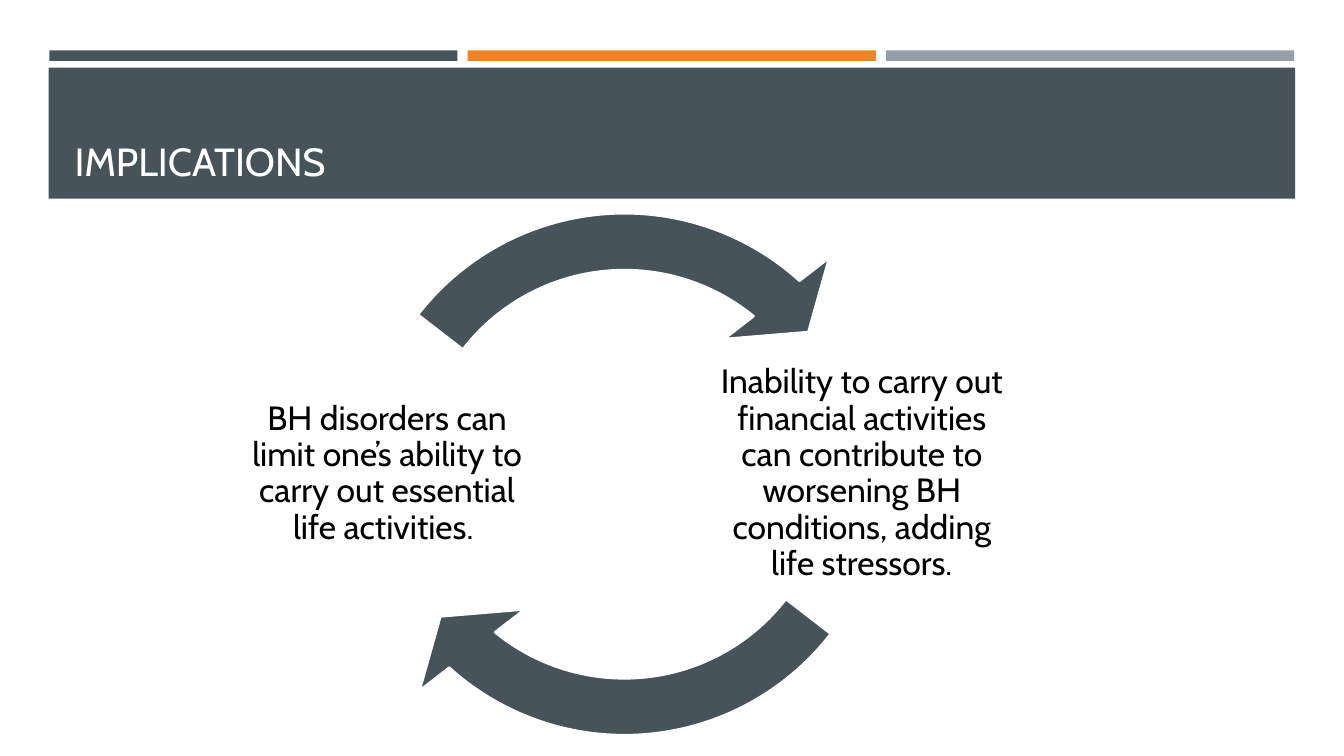
"""Build a slide with a title band and a two-step cycle."""
from dataclasses import dataclass

from pptx import Presentation
from pptx.dml.color import RGBColor
from pptx.enum import shapes as es, text as et
from pptx.util import Pt


@dataclass(frozen=True)
class Theme:
    font: str = "Cabin"
    dark: str = "465359"
    accent: str = "ED8428"
    grey: str = "969FA7"
    white: str = "FFFFFF"
    black: str = "000000"
    head: float = 28
    body: float = 24


@dataclass(frozen=True)
class Box:
    left: float
    top: float
    width: float
    height: float


@dataclass(frozen=True)
class Step:
    text: str
    left: float
    start: float
    end: float


THEME = Theme()
RECT = es.MSO_SHAPE.RECTANGLE
RING = Box(232.56, 125.28, 426.96, 426.96)
STEPS = (
    Step("Inability to carry out financial activities can contribute to "
         "worsening BH conditions, adding life stressors.", 511.92, 22.62, 78.54),
    Step("BH disorders can limit one’s ability to carry out essential "
         "life activities. ", 172.8, 130.62, 186.54),
)


def place(box: Box) -> tuple:
    """Turn a box into four lengths."""
    return Pt(box.left), Pt(box.top), Pt(box.width), Pt(box.height)


def draw(parent, kind, box: Box, fill: str, line: str | None = None):
    """Draw one flat preset shape."""
    shape = parent.add_shape(kind, *place(box))
    shape.shadow.inherit = False
    shape.fill.solid()
    shape.fill.fore_color.rgb = RGBColor.from_string(fill)
    if line:
        shape.line.color.rgb = RGBColor.from_string(line)
        shape.line.width = Pt(1.75)
    else:
        shape.line.fill.background()
    return shape


def write(shape, words: str, *, size: float, color: str, align, anchor,
          space: float = 1.0, inset: float | None = None) -> None:
    """Fill a shape with one formatted paragraph."""
    frame = shape.text_frame
    frame.text = words
    frame.word_wrap = True
    frame.auto_size = et.MSO_AUTO_SIZE.NONE
    frame.vertical_anchor = anchor
    if inset is not None:
        frame.margin_left = frame.margin_right = Pt(inset)
        frame.margin_top = frame.margin_bottom = Pt(inset)
    para = frame.paragraphs[0]
    para.alignment = align
    para.line_spacing = space
    font = para.runs[0].font
    font.name = THEME.font
    font.size = Pt(size)
    font.color.rgb = RGBColor.from_string(color)


def header(slide) -> None:
    """Draw the three bars, the band and the title."""
    for i, fill in enumerate((THEME.dark, THEME.accent, THEME.grey)):
        draw(slide.shapes, RECT, Box(35.2 + 298.8 * i, 36, 291.6, 7.5), fill)
    draw(slide.shapes, RECT, Box(34.8, 48.4, 890.4, 93.6), THEME.dark)
    title = slide.shapes.title
    title.left, title.top, title.width, title.height = place(
        Box(46.08, 55.44, 868.32, 79.92))
    write(title, "IMPLICATIONS", size=THEME.head, color=THEME.white,
          align=et.PP_ALIGN.LEFT, anchor=et.MSO_ANCHOR.BOTTOM)
    slide.shapes._spTree.append(title._element)


def cycle(slide, steps: tuple[Step, ...]) -> None:
    """Draw each step and the arrow that leaves it."""
    group = slide.shapes.add_group_shape().shapes
    for step in steps:
        label = group.add_textbox(*place(Box(step.left, 234.72, 207.36, 207.36)))
        write(label, step.text, size=THEME.body, color=THEME.black,
              align=et.PP_ALIGN.CENTER, anchor=et.MSO_ANCHOR.MIDDLE,
              space=0.9, inset=2.4)
        arrow = draw(group, es.MSO_SHAPE.CIRCULAR_ARROW, RING,
                     THEME.dark, THEME.white)
        for i, value in enumerate((0.095, 6.84, step.end, step.start, 0.111)):
            arrow.adjustments[i] = value


def main() -> None:
    """Build and save the deck."""
    deck = Presentation()
    deck.slide_width, deck.slide_height = Pt(960), Pt(540)
    slide = deck.slides.add_slide(deck.slide_layouts[5])
    header(slide)
    cycle(slide, STEPS)
    deck.save("out.pptx")


if __name__ == "__main__":
    main()
